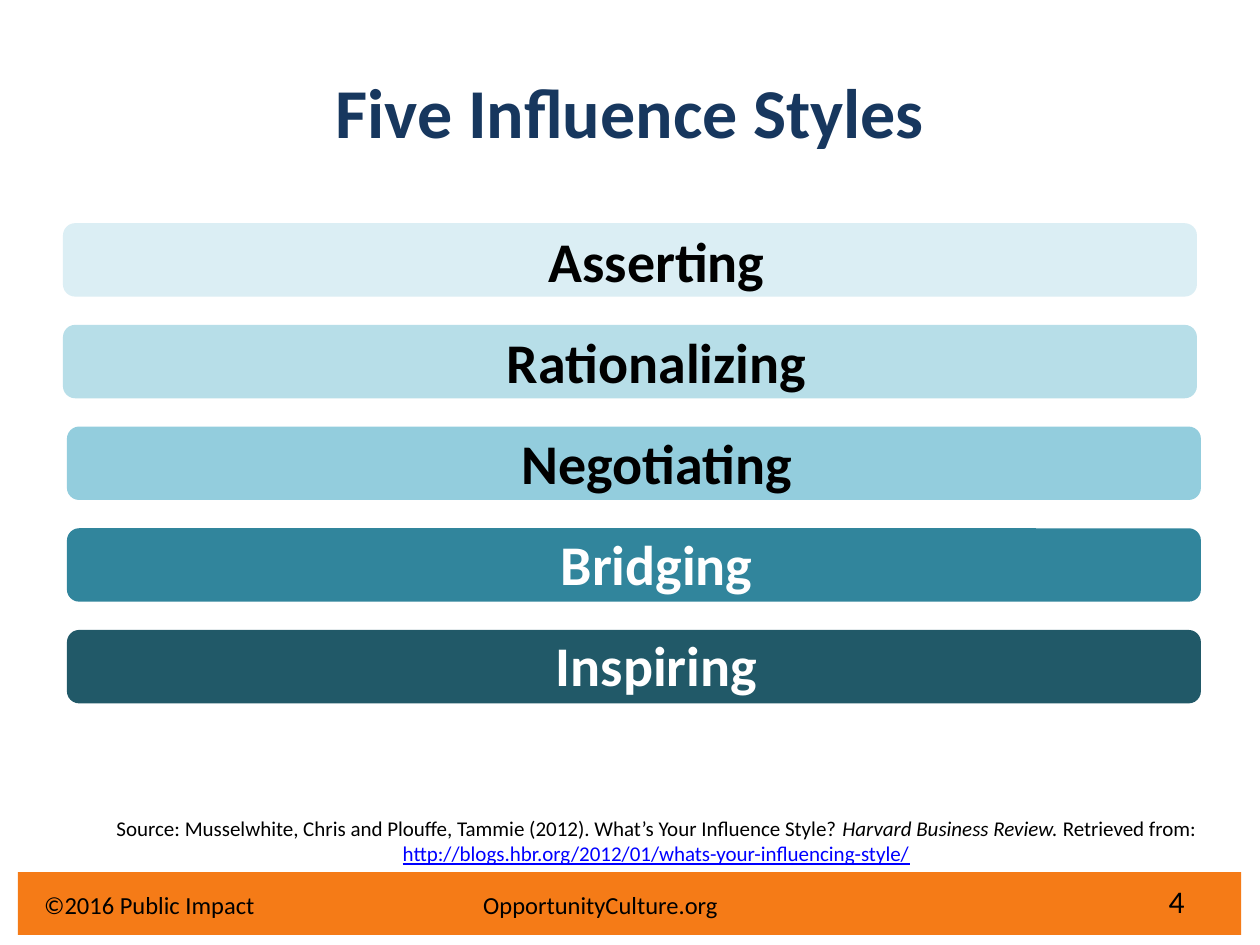
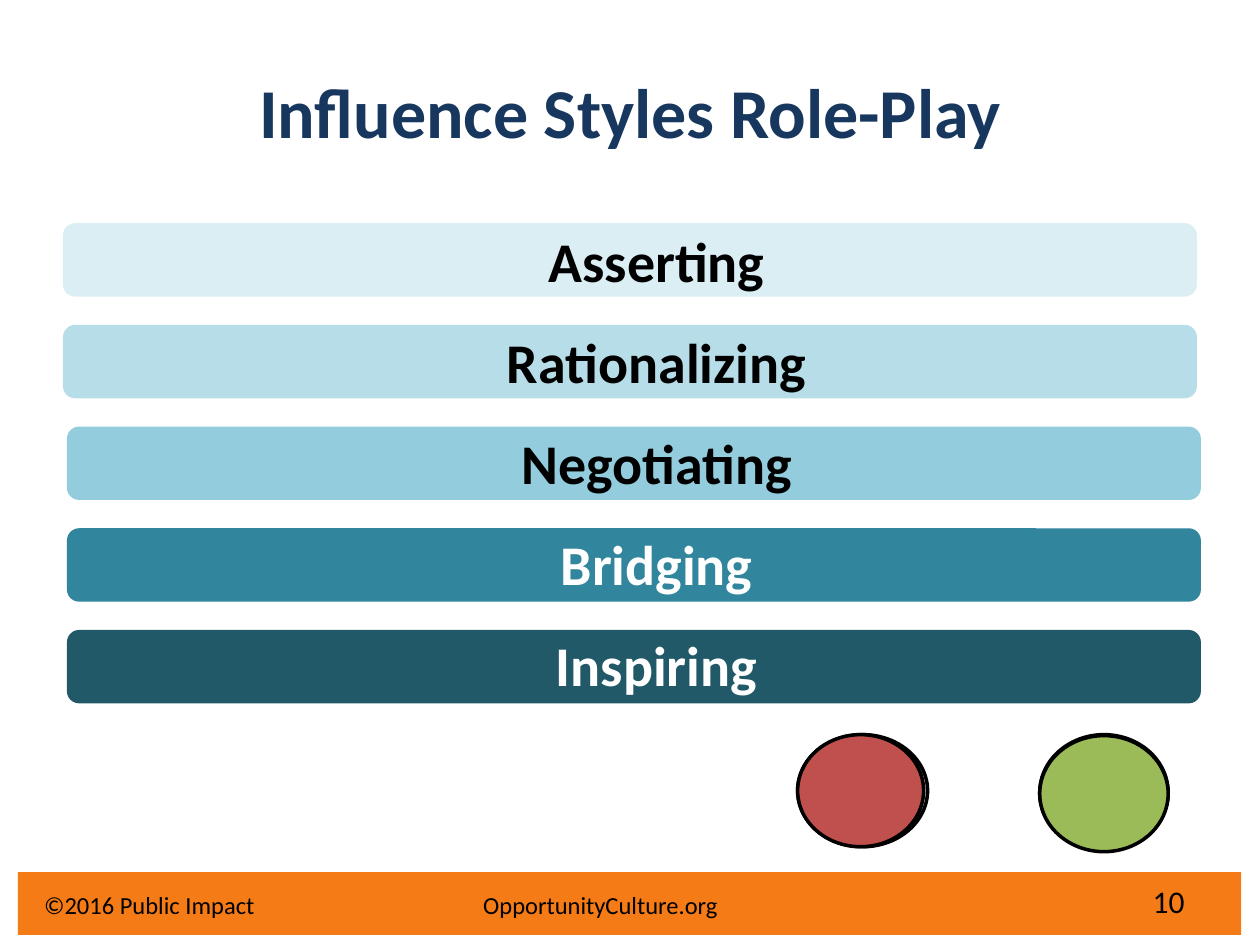
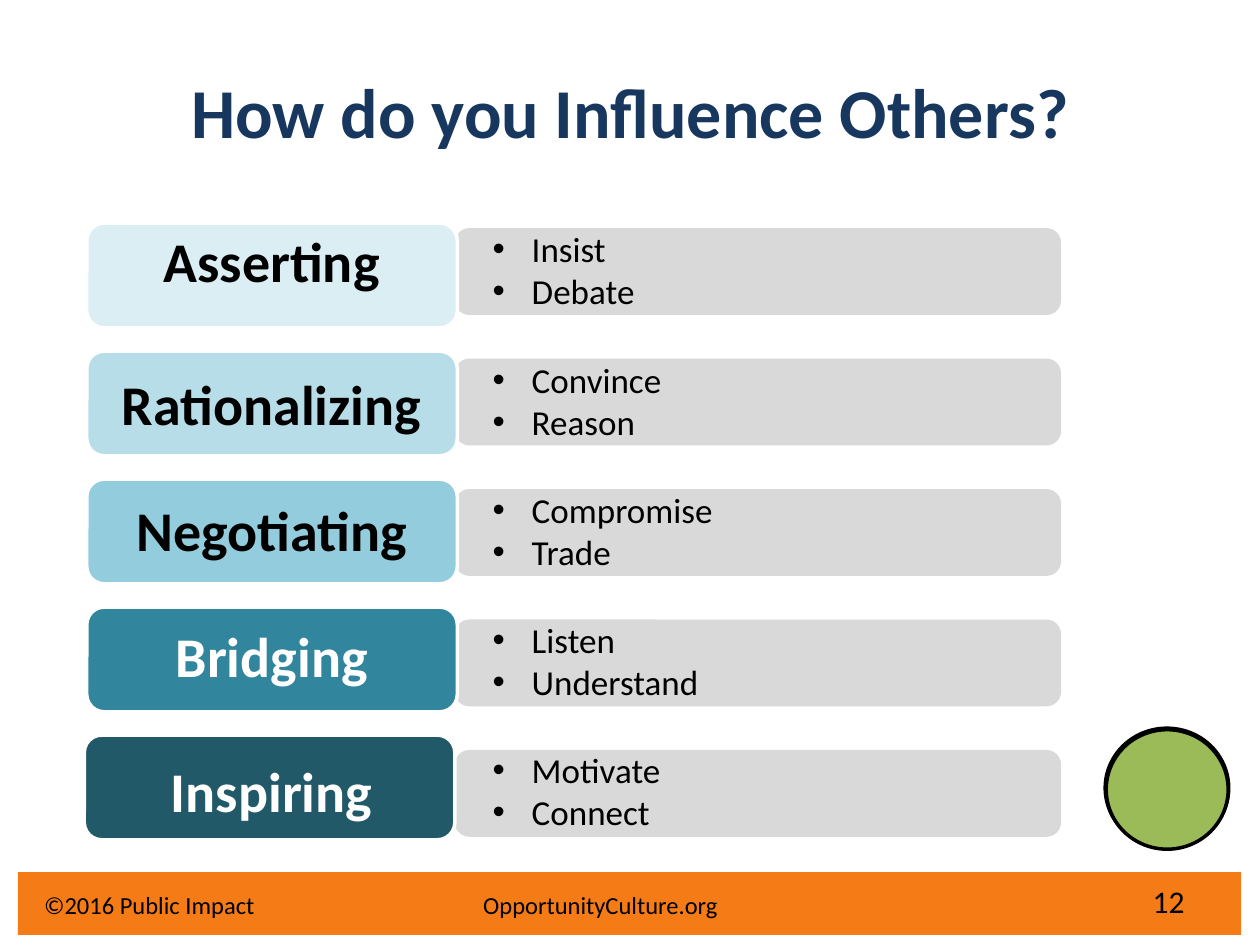
from lxml import etree
from pptx import Presentation
from pptx.dml.color import RGBColor
from pptx.enum.shapes import MSO_SHAPE as Shape
from pptx.enum.text import MSO_ANCHOR as Anchor, PP_ALIGN as Align
from pptx.oxml.ns import qn
from pptx.util import Cm, Pt

# Shared look
FONT = "Calibri"
BLACK, WHITE = "000000", "FFFFFF"
NAVY, ORANGE, LINK = "17375E", "F57B17", "0000FF"
GREY, PALE, RED, GREEN = "D9D9D9", "F2F2F2", "C0504D", "9BBB59"
LINE_HEIGHT = 1.2

# Influence style, its bar colour, its text colour
STYLES = [
    ("Asserting", "DBEEF4", BLACK),
    ("Rationalizing", "B7DEE8", BLACK),
    ("Negotiating", "93CDDD", BLACK),
    ("Bridging", "31859C", WHITE),
    ("Inspiring", "215968", WHITE),
]
ACTIONS = [
    ("Insist", "Debate"),
    ("Convince", "Reason"),
    ("Compromise", "Trade"),
    ("Listen", "Understand"),
    ("Motivate", "Connect"),
]


def rgb(color):
    return RGBColor.from_string(color)


def add_box(slide, kind, box, fill, line=None):
    shape = slide.shapes.add_shape(kind, *map(Cm, box))
    shape.shadow.inherit = False
    shape.fill.solid()
    shape.fill.fore_color.rgb = rgb(fill)
    if line:
        shape.line.color.rgb = rgb(line)
        shape.line.width = Pt(2)
    else:
        shape.line.fill.background()
    return shape


def add_bullet(paragraph, indent):
    properties = paragraph._p.get_or_add_pPr()
    properties.set("marL", str(Cm(indent)))
    properties.set("indent", str(-Cm(indent)))
    etree.SubElement(properties, qn("a:buFont"), typeface="Arial")
    etree.SubElement(properties, qn("a:buChar"), char="•")


def add_tab_stop(paragraph, position):
    tabs = etree.SubElement(paragraph._p.get_or_add_pPr(), qn("a:tabLst"))
    etree.SubElement(tabs, qn("a:tab"), pos=str(Cm(position)), algn="l")


def add_text(slide, box, paragraphs, size, color=BLACK, bold=False,
             align=Align.LEFT, anchor=Anchor.TOP, gaps=None, bullet=None, tab=None):
    """Each paragraph is a list of (text, format) runs; gaps are points before each."""
    frame = slide.shapes.add_textbox(*map(Cm, box)).text_frame
    frame.word_wrap = True
    frame.vertical_anchor = anchor
    for index, runs in enumerate(paragraphs):
        paragraph = frame.add_paragraph() if index else frame.paragraphs[0]
        paragraph.alignment = align
        if gaps and gaps[index]:
            paragraph.space_before = Pt(gaps[index])
        if bullet:
            add_bullet(paragraph, bullet)
        if tab:
            add_tab_stop(paragraph, tab)
        for text, style in runs:
            run = paragraph.add_run()
            run.text = text
            font = run.font
            font.name, font.size, font.bold = FONT, Pt(size), bold
            font.italic = style.get("italic", False)
            font.underline = style.get("underline", False)
            font.color.rgb = rgb(style.get("color", color))


def add_base_slide(presentation, title, number):
    slide = presentation.slides.add_slide(presentation.slide_layouts[6])
    add_box(slide, Shape.RECTANGLE, (0.36, 17.58, 24.66, 1.27), ORANGE)
    add_text(slide, (1.27, 0.64, 22.86, 3.18), [[(title, {})]], size=40, color=NAVY,
             bold=True, align=Align.CENTER, anchor=Anchor.MIDDLE)
    add_text(slide, (22.43, 17.65, 1.7, 1.02), [[(str(number), {})]], size=18,
             align=Align.RIGHT, anchor=Anchor.MIDDLE)
    add_text(slide, (0.64, 17.73, 16.18, 1.02),
             [[("©2016 Public Impact\tOpportunityCulture.org", {})]], size=14,
             anchor=Anchor.MIDDLE, tab=8.85)
    return slide


def add_style_names(slide, box, blank_sizes):
    """Write the five names, parted by gaps as tall as lines of the given sizes."""
    names = [[(name, {"color": color})] for name, _, color in STYLES]
    gaps = [0] + [size * LINE_HEIGHT for size in blank_sizes]
    add_text(slide, box, names, size=32, bold=True, align=Align.CENTER, gaps=gaps)


def add_style_bars(slide):
    for row, (_, fill, _) in enumerate(STYLES):
        left = 1.27 if row < 2 else 1.35
        add_box(slide, Shape.ROUNDED_RECTANGLE,
                (left, 4.5 + 2.05 * row, 22.86, 1.48), fill)
    add_style_names(slide, (4.45, 4.45, 17.58, 9.83), [16] * 4)


def add_light(slide, back, front, color):
    add_box(slide, Shape.OVAL, back, PALE, line=BLACK)
    add_box(slide, Shape.OVAL, front, color, line=BLACK)


def add_action_rows(slide):
    for row in range(len(ACTIONS)):
        add_box(slide, Shape.ROUNDED_RECTANGLE,
                (9.17, 4.6 + 2.63 * row, 12.22, 1.75), GREY)
    for row, (_, fill, _) in enumerate(STYLES):
        left = 1.75 if row < 4 else 1.7
        add_box(slide, Shape.ROUNDED_RECTANGLE,
                (left, 4.5 + 2.58 * row, 7.47, 2.11), fill, line=WHITE)
    add_style_names(slide, (2.18, 4.45, 6.6, 12.4), [36, 28, 28, 32])
    actions = [[(action, {})] for pair in ACTIONS for action in pair]
    pair_gap = 22 * LINE_HEIGHT
    gaps = [pair_gap if index and index % 2 == 0 else 0 for index in range(len(actions))]
    add_text(slide, (9.68, 4.47, 6.93, 12.9), actions, size=20, gaps=gaps, bullet=0.79)


def main():
    presentation = Presentation()
    presentation.slide_width, presentation.slide_height = Cm(25.4), Cm(19.05)

    # Five styles with their source
    slide = add_base_slide(presentation, "Five Influence Styles", 4)
    add_style_bars(slide)
    source = [
        ("Source: Musselwhite, Chris and Plouffe, Tammie (2012). "
         "What’s Your Influence Style? ", {}),
        ("Harvard Business Review.", {"italic": True}),
        (" Retrieved from: ", {}),
        ("http://blogs.hbr.org/2012/01/whats-your-influencing-style/",
         {"color": LINK, "underline": True}),
    ]
    add_text(slide, (1.19, 16.31, 24.08, 1.27), [source], size=12, align=Align.CENTER)

    # Role-play with stop and go lights
    slide = add_base_slide(presentation, "Influence Styles Role-Play", 10)
    add_style_bars(slide)
    add_light(slide, (16.08, 14.81, 2.62, 2.26), (16.08, 14.81, 2.54, 2.26), RED)
    add_light(slide, (20.96, 14.81, 2.59, 2.34), (20.96, 14.83, 2.59, 2.34), GREEN)

    # Actions that belong to each style
    slide = add_base_slide(presentation, "How do you Influence Others?", 12)
    add_action_rows(slide)
    add_light(slide, (22.28, 14.68, 2.49, 2.41), (22.3, 14.71, 2.46, 2.41), GREEN)

    presentation.save("out.pptx")


if __name__ == "__main__":
    main()
